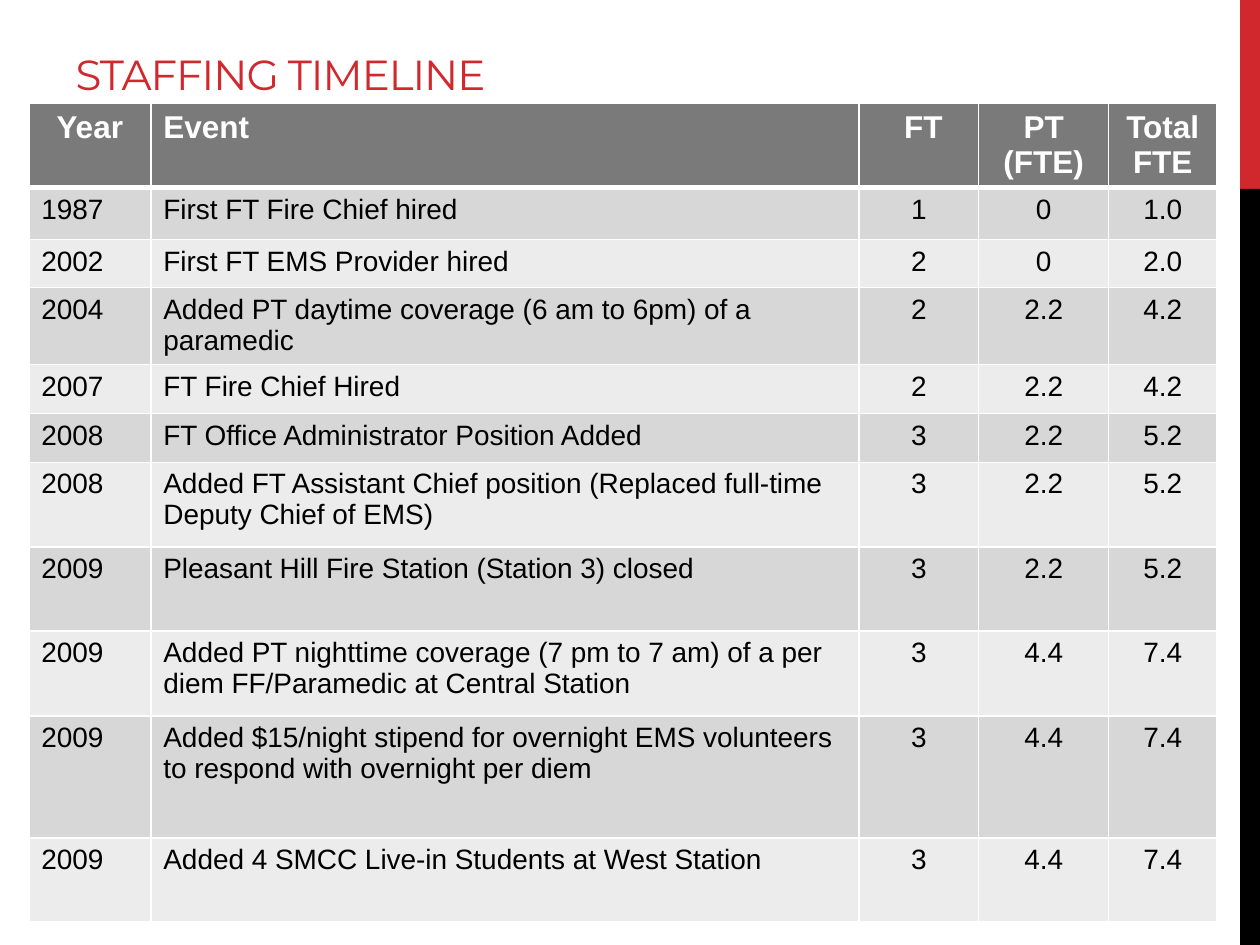
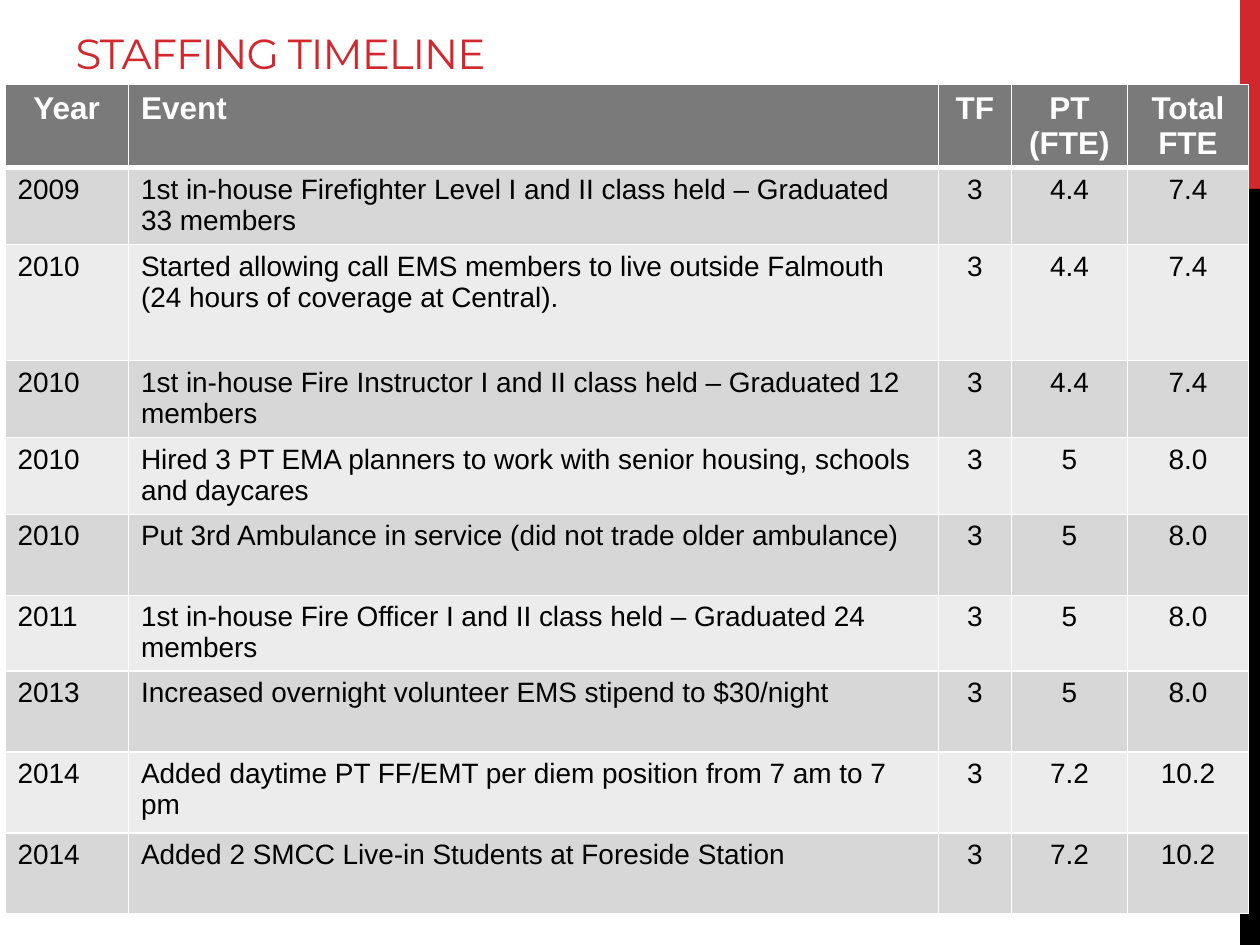
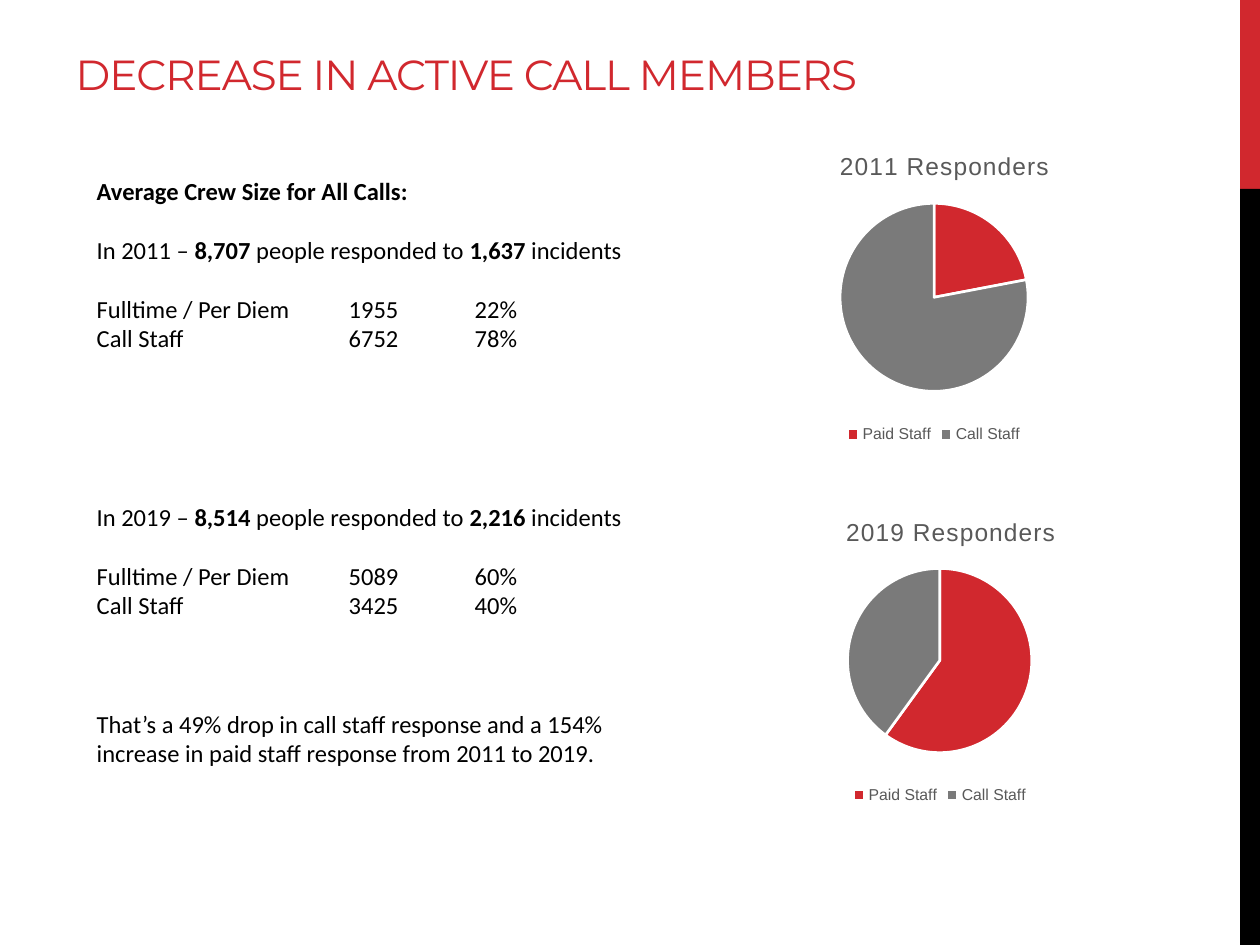
from dataclasses import dataclass
from typing import NamedTuple

from lxml.etree import SubElement
from pptx import Presentation
from pptx.chart.data import CategoryChartData
from pptx.dml.color import RGBColor
from pptx.enum.chart import XL_CHART_TYPE, XL_LEGEND_POSITION
from pptx.enum.shapes import MSO_SHAPE
from pptx.enum.text import MSO_ANCHOR, MSO_AUTO_SIZE, PP_ALIGN
from pptx.oxml.ns import qn
from pptx.util import Cm, Pt


@dataclass(frozen=True)
class Theme:
    """Colours, fonts and type sizes shared by the deck."""
    red: RGBColor = RGBColor(0xD1, 0x28, 0x2E)
    black: RGBColor = RGBColor(0, 0, 0)
    white: RGBColor = RGBColor(0xFF, 0xFF, 0xFF)
    gray: RGBColor = RGBColor(0x7A, 0x7A, 0x7A)
    caption: RGBColor = RGBColor(0x59, 0x59, 0x59)
    dark_row: RGBColor = RGBColor(0xD7, 0xD7, 0xD7)
    light_row: RGBColor = RGBColor(0xEC, 0xEC, 0xEC)
    title_font: str = "Montserrat"
    table_font: str = "Arial"
    body_font: str = "Calibri"
    title_size: int = 24
    header_size: int = 18
    cell_size: int = 16
    body_size: int = 14
    body_line: int = 17
    chart_size: int = 10
    chart_title_size: int = 14
    legend_size: int = 9


THEME = Theme()


class Band(NamedTuple):
    """One part of the stripe on the right edge."""
    top: float
    height: float
    color: RGBColor


class Row(NamedTuple):
    """One staffing event with its row height."""
    height: float
    year: str
    event: str
    full_time: str
    part_time: str
    total: str


class Timeline(NamedTuple):
    """A staffing table, its place and the top of its title."""
    title_top: float
    left: float
    top: float
    columns: list[float]
    rows: list[Row]


class Span(NamedTuple):
    """A stretch of text in one weight."""
    text: str
    bold: bool = False


class Para(NamedTuple):
    """A paragraph and the number of line gaps before it."""
    spans: list[Span]
    gap: int = 0


class Pie(NamedTuple):
    """A chart of paid staff against call staff."""
    title: str
    left: float
    top: float
    width: float
    height: float
    shares: tuple[int, int]


BANDS = [Band(0, 3.81, THEME.red), Band(3.81, 15.24, THEME.black)]

TIMELINES = [
    Timeline(0.43, 0.58, 2.08, [2.46, 14.28, 2.41, 2.62, 2.18], [
        Row(1.7, "Year", "Event", " FT", "PT (FTE)", "Total FTE"),
        Row(1.05, "1987", "First FT Fire Chief hired", "1", "0", "1.0"),
        Row(0.97, "2002", "First FT EMS Provider hired", "2", "0", "2.0"),
        Row(1.55, "2004", "Added PT daytime coverage (6 am to 6pm) of a paramedic",
            "2", "2.2", "4.2"),
        Row(0.99, "2007", "FT Fire Chief Hired", "2", "2.2", "4.2"),
        Row(0.98, "2008", "FT Office Administrator Position Added", "3", "2.2", "5.2"),
        Row(1.71, "2008", "Added FT Assistant Chief position (Replaced full-time "
            "Deputy Chief of EMS)", "3", "2.2", "5.2"),
        Row(1.69, "2009", "Pleasant Hill Fire Station (Station 3) closed",
            "3", "2.2", "5.2"),
        Row(1.71, "2009", "Added PT nighttime coverage (7 pm to 7 am) of a per diem "
            "FF/Paramedic at Central Station", "3", "4.4", "7.4"),
        Row(2.46, "2009", "Added $15/night stipend for overnight EMS volunteers to "
            "respond with overnight per diem", "3", "4.4", "7.4"),
        Row(1.7, "2009", "Added 4 SMCC Live-in Students at West Station",
            "3", "4.4", "7.4"),
    ]),
    Timeline(0, 0.1, 1.7, [2.49, 16.33, 1.47, 2.34, 2.44], [
        Row(1.68, "Year", "Event", "TF", "PT (FTE)", "Total FTE"),
        Row(1.55, "2009", "1st in-house Firefighter Level I and II class held – "
            "Graduated 33 members", "3", "4.4", "7.4"),
        Row(2.34, "2010", "Started allowing call EMS members to live outside Falmouth "
            "(24 hours of coverage at Central).", "3", "4.4", "7.4"),
        Row(1.55, "2010", "1st in-house Fire Instructor I and II class held – "
            "Graduated 12 members", "3", "4.4", "7.4"),
        Row(1.55, "2010", "Hired 3 PT EMA planners to work with senior housing, "
            "schools and daycares", "3", "5", "8.0"),
        Row(1.63, "2010", "Put 3rd Ambulance in service (did not trade older ambulance)",
            "3", "5", "8.0"),
        Row(1.53, "2011", "1st in-house Fire Officer I and II class held – "
            "Graduated 24 members", "3", "5", "8.0"),
        Row(1.63, "2013", "Increased overnight volunteer EMS stipend to $30/night",
            "3", "5", "8.0"),
        Row(1.63, "2014", "Added daytime PT FF/EMT per diem position from 7 am to 7 pm",
            "3", "7.2", "10.2"),
        Row(1.63, "2014", "Added 2 SMCC Live-in Students at Foreside Station",
            "3", "7.2", "10.2"),
    ]),
]


def response(year: str, people: str, incidents: str, gap: int) -> Para:
    """Describe how many people answered a year's incidents."""
    return Para([Span(f"In {year} – "), Span(people, True), Span(" people responded to "),
                 Span(incidents, True), Span(" incidents")], gap)


CREW_PARAS = [
    Para([Span("Average Crew Size for All Calls:", True)]),
    response("2011", "8,707", "1,637", 1),
    Para([Span("Fulltime / Per Diem\t1955\t22%")], 1),
    Para([Span("Call Staff\t6752\t78%")]),
    response("2019", "8,514", "2,216", 5),
    Para([Span("Fulltime / Per Diem\t5089\t60%")], 1),
    Para([Span("Call Staff\t3425\t40%")]),
    Para([Span("That’s a 49% drop in call staff response and a 154% increase in paid "
               "staff response from 2011 to 2019.")], 3),
]
CREW_TABS = [5.08, 7.62]

PIES = [
    Pie("2011 Responders", 14.6, 2.62, 8.46, 6.43, (22, 78)),
    Pie("2019 Responders", 13.97, 10.01, 9.96, 6.3, (60, 40)),
]
PIE_TOP, PIE_DIAMETER = 0.23, 0.59
PIE_TITLE_TOP, PIE_TITLE_WIDTH = 0.05, 3.97


def set_font(font, name: str, size: int, color: RGBColor, bold: bool = False) -> None:
    """Apply a typeface, size, colour and weight."""
    font.name = name
    font.size = Pt(size)
    font.color.rgb = color
    font.bold = bold


def add_span(para, text: str, name: str, size: int, color: RGBColor,
             bold: bool = False, spacing: int = 0) -> None:
    """Add one formatted run, with letter spacing in hundredths of a point."""
    span = para.add_run()
    span.text = text
    set_font(span.font, name, size, color, bold)
    if spacing:
        span.font._element.set("spc", str(spacing))


def add_bands(slide) -> None:
    """Place the edge stripe on the layout behind every slide."""
    for band in BANDS:
        box = slide.shapes.add_shape(MSO_SHAPE.RECTANGLE, Cm(25), Cm(band.top),
                                     Cm(0.4), Cm(band.height))
        box.shadow.inherit = False
        box.fill.solid()
        box.fill.fore_color.rgb = band.color
        box.line.fill.background()
        slide.slide_layout.shapes.element.append(box.element)


def add_page(deck, title: str, top: float, width: float):
    """Add a slide with a formatted title."""
    page = deck.slides.add_slide(deck.slide_layouts[5])
    box = page.shapes.title
    box.left, box.top, box.width, box.height = Cm(1.27), Cm(top), Cm(width), Cm(1.7)
    frame = box.text_frame
    frame.word_wrap = True
    frame.auto_size = MSO_AUTO_SIZE.NONE
    frame.vertical_anchor = MSO_ANCHOR.BOTTOM
    para = frame.paragraphs[0]
    para.alignment = PP_ALIGN.LEFT
    add_span(para, title, THEME.title_font, THEME.title_size, THEME.red, spacing=-60)
    return page


def add_borders(cell, row_index: int) -> None:
    """Draw white cell borders, heavier below the header."""
    properties = cell._tc.get_or_add_tcPr()
    heavy_side = {0: "lnB", 1: "lnT"}.get(row_index)
    for side in ("lnL", "lnR", "lnT", "lnB"):
        width = Pt(3 if side == heavy_side else 1)
        line = SubElement(properties, qn(f"a:{side}"), w=str(width))
        fill = SubElement(line, qn("a:solidFill"))
        SubElement(fill, qn("a:srgbClr"), val=str(THEME.white))


def fill_cell(cell, text: str, row_index: int, column_index: int) -> None:
    """Write and format one table cell."""
    header = row_index == 0
    add_borders(cell, row_index)
    cell.fill.solid()
    stripe = THEME.dark_row if row_index % 2 else THEME.light_row
    cell.fill.fore_color.rgb = THEME.gray if header else stripe
    para = cell.text_frame.paragraphs[0]
    centred = column_index > 1 or (header and column_index == 0)
    para.alignment = PP_ALIGN.CENTER if centred else PP_ALIGN.LEFT
    add_span(para, text, THEME.table_font,
             THEME.header_size if header else THEME.cell_size,
             THEME.white if header else THEME.black, header)


def add_timeline(page, timeline: Timeline) -> None:
    """Draw a staffing table."""
    rows, columns = timeline.rows, timeline.columns
    table = page.shapes.add_table(
        len(rows), len(columns), Cm(timeline.left), Cm(timeline.top),
        Cm(sum(columns)), Cm(sum(row.height for row in rows))).table
    table.horz_banding = False
    for column, width in zip(table.columns, columns):
        column.width = Cm(width)
    for row_index, row in enumerate(rows):
        table.rows[row_index].height = Cm(row.height)
        for column_index, text in enumerate(row[1:]):
            fill_cell(table.cell(row_index, column_index), text, row_index, column_index)


def add_crew_text(page) -> None:
    """Write the crew size summary."""
    box = page.shapes.add_textbox(Cm(1.7), Cm(3.4), Cm(11.86), Cm(12.22))
    frame = box.text_frame
    frame.word_wrap = True
    frame.auto_size = MSO_AUTO_SIZE.SHAPE_TO_FIT_TEXT
    frame.vertical_anchor = MSO_ANCHOR.MIDDLE
    for index, item in enumerate(CREW_PARAS):
        para = frame.add_paragraph() if index else frame.paragraphs[0]
        para.space_before = Pt(item.gap * THEME.body_line)
        stops = SubElement(para._p.get_or_add_pPr(), qn("a:tabLst"))
        for stop in CREW_TABS:
            SubElement(stops, qn("a:tab"), pos=str(Cm(stop)), algn="l")
        for span in item.spans:
            add_span(para, span.text, THEME.body_font, THEME.body_size,
                     THEME.black, span.bold)


def set_layout(parent, index: int, **fractions: float) -> None:
    """Place a chart part by fractions of the chart area."""
    for previous in parent.findall(qn("c:layout")):
        parent.remove(previous)
    layout = SubElement(parent, qn("c:layout"))
    parent.insert(index, layout)
    manual = SubElement(layout, qn("c:manualLayout"))
    if "w" in fractions:
        SubElement(manual, qn("c:layoutTarget"), val="inner")
    for axis in ("x", "y"):
        SubElement(manual, qn(f"c:{axis}Mode"), val="edge")
    for name, value in fractions.items():
        SubElement(manual, qn(f"c:{name}"), val=f"{value:.3f}")


def add_pie(page, pie: Pie) -> None:
    """Draw one responder pie chart."""
    data = CategoryChartData()
    data.categories = ["Paid Staff", "Call Staff"]
    data.add_series("Series 1", pie.shares)
    chart = page.shapes.add_chart(XL_CHART_TYPE.PIE, Cm(pie.left), Cm(pie.top),
                                  Cm(pie.width), Cm(pie.height), data).chart
    set_font(chart.font, THEME.table_font, THEME.chart_size, THEME.black)
    chart.has_title = True
    add_span(chart.chart_title.text_frame.paragraphs[0], pie.title, THEME.table_font,
             THEME.chart_title_size, THEME.caption, spacing=50)
    set_layout(chart.chart_title._element, 1,
               x=(1 - PIE_TITLE_WIDTH / pie.width) / 2, y=PIE_TITLE_TOP)
    chart.has_legend = True
    chart.legend.position = XL_LEGEND_POSITION.BOTTOM
    chart.legend.include_in_layout = False
    set_font(chart.legend.font, THEME.table_font, THEME.legend_size, THEME.caption)
    plot = chart.plots[0]
    plot.vary_by_categories = True
    for index, color in enumerate((THEME.red, THEME.gray)):
        style = plot.series[0].points[index].format
        style.fill.solid()
        style.fill.fore_color.rgb = color
        style.line.color.rgb = THEME.white
        style.line.width = Pt(1.5)
    width = PIE_DIAMETER * pie.height / pie.width
    set_layout(chart.element.find(f".//{qn('c:plotArea')}"), 0,
               x=(1 - width) / 2, y=PIE_TOP, w=width, h=PIE_DIAMETER)


def main() -> None:
    """Build and save the deck."""
    deck = Presentation()
    deck.slide_width, deck.slide_height = Cm(25.4), Cm(19.05)
    for timeline in TIMELINES:
        page = add_page(deck, "STAFFING TIMELINE", timeline.title_top, 16.08)
        add_timeline(page, timeline)
    page = add_page(deck, "DECREASE IN ACTIVE CALL MEMBERS", 0.43, 19.48)
    add_crew_text(page)
    for pie in PIES:
        add_pie(page, pie)
    add_bands(page)
    deck.save("out.pptx")


if __name__ == "__main__":
    main()
